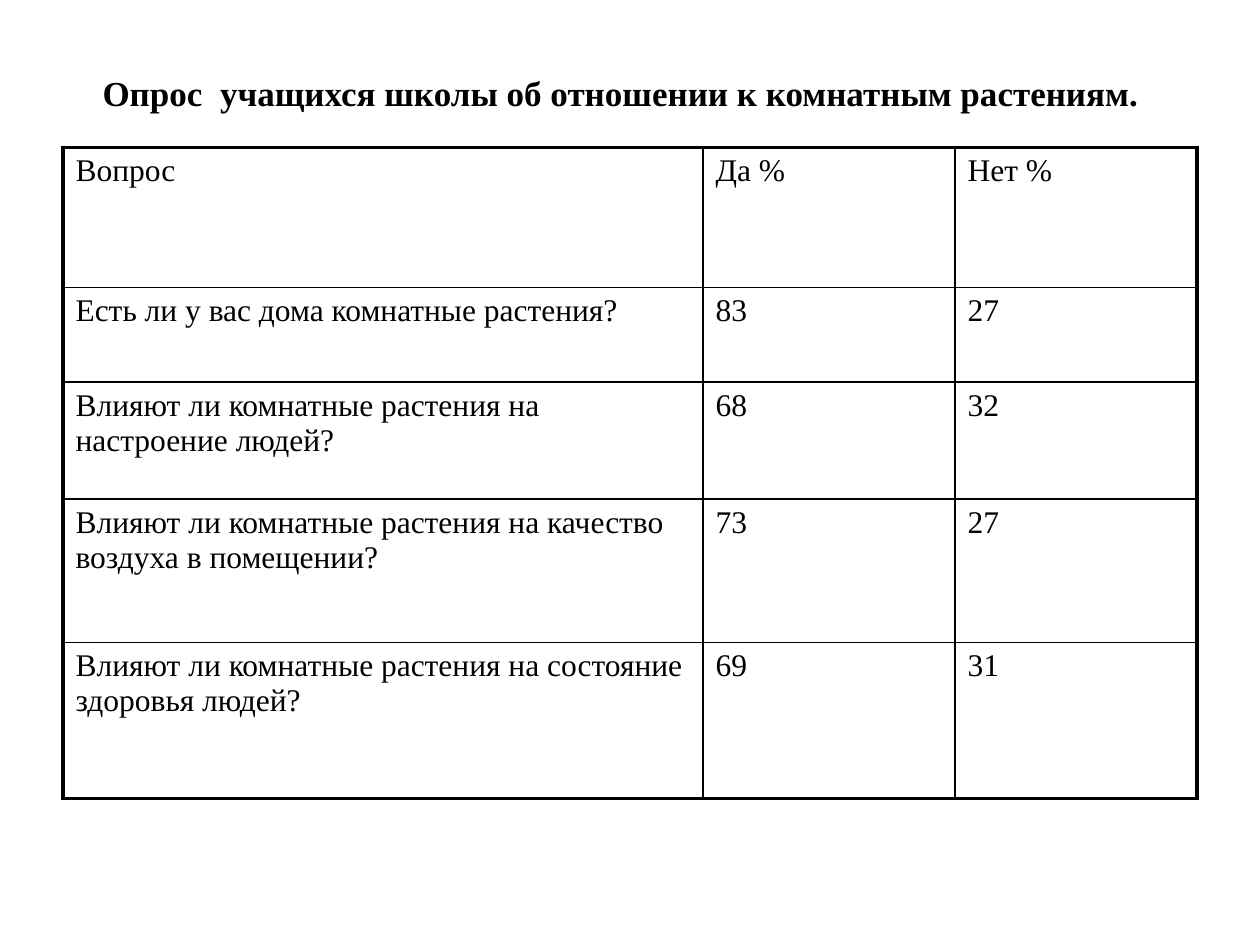
import pptx
import pptx.dml.color
import pptx.enum.text
import pptx.util
import lxml.etree
import pptx.oxml.ns

Inches = pptx.util.Inches
Pt = pptx.util.Pt


def format_font(font, size, color, bold=False):
    font.name = "Times New Roman"
    font.size = Pt(size)
    font.bold = bold
    font.color.rgb = pptx.dml.color.RGBColor.from_string(color)


def add_border(cell, side, width, color):
    qualify = pptx.oxml.ns.qn
    properties = cell._tc.get_or_add_tcPr()
    line = lxml.etree.SubElement(properties, qualify("a:ln" + side), w=str(Pt(width)))
    fill = lxml.etree.SubElement(line, qualify("a:solidFill"))
    lxml.etree.SubElement(fill, qualify("a:srgbClr"), val=color)


black = "000000"
thick, thin = 2.25, 1
margin = 0.5
column_widths = [5.08, 2, 1.92]
row_heights = [1.11, 0.75, 0.93, 1.14, 1.24]
survey = [
    ["Вопрос", "Да %", "Нет %"],
    ["Есть ли у вас дома комнатные растения?", "83", "27"],
    ["Влияют ли комнатные растения на настроение людей?", "68", "32"],
    ["Влияют ли комнатные растения на качество воздуха в помещении?", "73", "27"],
    ["Влияют ли комнатные растения на состояние здоровья людей?", "69", "31"],
]

presentation = pptx.Presentation()
presentation.slide_width = Inches(10)
presentation.slide_height = Inches(7.5)
slide = presentation.slides.add_slide(presentation.slide_layouts[5])

title = slide.shapes.title
title.left, title.top = Inches(margin), Inches(0.3)
title.width, title.height = Inches(sum(column_widths)), Inches(0.62)
title_frame = title.text_frame
title_frame.text = "Опрос  учащихся школы об отношении к комнатным растениям."
title_frame.word_wrap = True
title_frame.auto_size = pptx.enum.text.MSO_AUTO_SIZE.NONE
title_frame.vertical_anchor = pptx.enum.text.MSO_ANCHOR.BOTTOM
title_frame.margin_bottom = Inches(0.02)
title_frame.margin_right = Inches(0.25)
title_paragraph = title_frame.paragraphs[0]
title_paragraph.alignment = pptx.enum.text.PP_ALIGN.CENTER
format_font(title_paragraph.runs[0].font, 20, black, bold=True)

table = slide.shapes.add_table(
    len(row_heights), len(column_widths), Inches(margin), Inches(1.17),
    Inches(sum(column_widths)), Inches(sum(row_heights)),
).table
table.first_row = False
table.horz_banding = False
for column, width in zip(table.columns, column_widths):
    column.width = Inches(width)
for row, height in zip(table.rows, row_heights):
    row.height = Inches(height)

last_row, last_column = len(row_heights) - 1, len(column_widths) - 1
for row_index, answers in enumerate(survey):
    for column_index, answer in enumerate(answers):
        cell = table.cell(row_index, column_index)
        cell.text_frame.text = answer
        format_font(cell.text_frame.paragraphs[0].runs[0].font, 18, black)
        outer_sides = {
            "L": column_index == 0,
            "R": column_index == last_column,
            "T": row_index == 0,
            "B": row_index == last_row,
        }
        for side, outer in outer_sides.items():
            add_border(cell, side, thick if outer else thin, black)
        cell.fill.background()

presentation.save("out.pptx")
